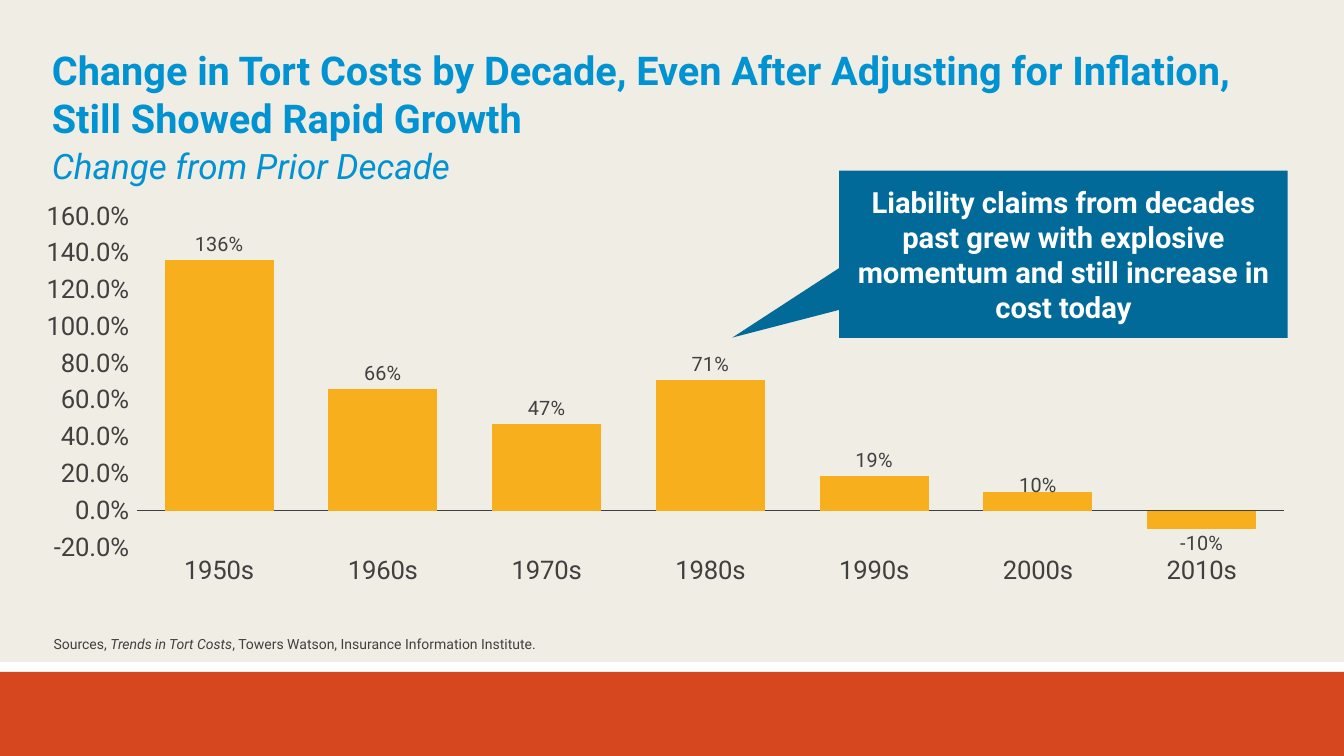
from lxml import etree
from pptx import Presentation
from pptx import util as u
from pptx.chart import data as chart_data
from pptx.dml import color
from pptx.enum import chart as chart_enum, shapes, text
from pptx.oxml import parse_xml
from pptx.oxml.ns import nsdecls, qn

BLUE, GREY = "0092D2", "404040"


def rgb(hex_code):
    return color.RGBColor.from_string(hex_code)


def add_text(shape, runs, size, hex_code, anchor, wrap, bold=False):
    frame = shape.text_frame
    frame.word_wrap = wrap
    frame.vertical_anchor = anchor
    para = frame.paragraphs[0]
    for wording, italic in runs:
        span = para.add_run()
        span.text = wording
        span.font.name = "Roboto"
        span.font.size = u.Pt(size)
        span.font.bold = bold
        span.font.italic = italic
        span.font.color.rgb = rgb(hex_code)
    return para


deck = Presentation()
deck.slide_width, deck.slide_height = u.Pt(1152), u.Pt(648)
page = deck.slides.add_slide(deck.slide_layouts[6])

panels = [
    (shapes.MSO_SHAPE.RECTANGLE, 0, 576, 1152, 72, "D7471F"),
    (shapes.MSO_SHAPE.RECTANGLE, 0, 0, 1152, 567.4, "F0EDE4"),
]
callout_panel = (shapes.MSO_SHAPE.RECTANGULAR_CALLOUT, 719.3, 146.2, 384.5, 143.3, "016A99")

decades = chart_data.CategoryChartData()
decades.categories = [f"{year}s" for year in range(1950, 2020, 10)]
decades.add_series("Change", [1.36, 0.66, 0.47, 0.71, 0.19, 0.1, -0.1])

for kind, left, top, width, height, fill in panels + [callout_panel]:
    if kind == shapes.MSO_SHAPE.RECTANGULAR_CALLOUT:
        chart = page.shapes.add_chart(
            chart_enum.XL_CHART_TYPE.COLUMN_CLUSTERED,
            u.Pt(39.6), u.Pt(170.6), u.Pt(1069.2), u.Pt(362.9), decades).chart
    panel = page.shapes.add_shape(kind, u.Pt(left), u.Pt(top), u.Pt(width), u.Pt(height))
    panel.shadow.inherit = False
    panel.fill.solid()
    panel.fill.fore_color.rgb = rgb(fill)
    panel.line.fill.background()

callout = panel
callout.adjustments[0], callout.adjustments[1] = -0.738, 0.499
frame = callout.text_frame
frame.margin_left = frame.margin_right = frame.margin_top = frame.margin_bottom = u.Pt(10.8)
para = add_text(
    callout,
    [("Liability claims from decades past grew with explosive momentum and still increase in cost today", False)],
    25, "FFFFFF", text.MSO_ANCHOR.MIDDLE, True, True)
para.alignment = text.PP_ALIGN.CENTER

chart.has_legend = False
chart.has_title = False
chart.font.name = "Roboto"
chart.font.size = u.Pt(22)
chart.font.color.rgb = rgb(GREY)

category_axis, value_axis = chart.category_axis, chart.value_axis
category_axis.tick_label_position = chart_enum.XL_TICK_LABEL_POSITION.LOW
category_axis.major_tick_mark = chart_enum.XL_TICK_MARK.NONE
category_axis.format.line.color.rgb = rgb(GREY)
category_axis.format.line.width = u.Pt(0.75)
value_axis.minimum_scale, value_axis.maximum_scale = -0.2, 1.6
value_axis.major_unit = 0.2
value_axis.has_major_gridlines = False
value_axis.format.line.fill.background()
value_axis.tick_labels.number_format = "0.0%"
value_axis.tick_labels.number_format_is_linked = False

plot = chart.plots[0]
plot.gap_width = 50
plot.vary_by_categories = False
bars = plot.series[0]
bars.invert_if_negative = False
bars.format.fill.solid()
bars.format.fill.fore_color.rgb = rgb("F7AF1E")

labels = bars.data_labels
labels.show_value = True
labels.number_format = "0%"
labels.number_format_is_linked = False
label_2000s = bars.points[5].data_label
for label in (labels, label_2000s):
    label.position = chart_enum.XL_LABEL_POSITION.OUTSIDE_END
    label.font.name = "Roboto"
    label.font.size = u.Pt(17)
    label.font.color.rgb = rgb(GREY)

label_xml = bars.data_labels._element.find(qn("c:dLbl"))
label_xml.insert(1, parse_xml(
    f'<c:layout {nsdecls("c")}><c:manualLayout><c:x val="0"/><c:y val="0.02"/></c:manualLayout></c:layout>'))
label_xml.insert(2, parse_xml(f'<c:numFmt {nsdecls("c")} formatCode="0%" sourceLinked="0"/>'))

plot_area = chart._chartSpace.chart.plotArea
for old_layout in plot_area.findall(qn("c:layout")):
    plot_area.remove(old_layout)
layout = parse_xml(f'<c:layout {nsdecls("c")}><c:manualLayout/></c:layout>')
plot_area.insert(0, layout)
for tag, value in [("layoutTarget", "inner"), ("xMode", "edge"), ("yMode", "edge"),
                   ("x", "0.073"), ("y", "0.041"), ("w", "0.919"), ("h", "0.782")]:
    etree.SubElement(layout[0], qn(f"c:{tag}")).set("val", value)

title = page.shapes.add_textbox(u.Pt(37.4), u.Pt(36), u.Pt(1066.3), u.Pt(90))
add_text(
    title,
    [("Change in Tort Costs by Decade, Even After Adjusting for Inflation, Still Showed Rapid Growth", False)],
    34, "0092D1", text.MSO_ANCHOR.TOP, True, True)

sources = page.shapes.add_textbox(u.Pt(38.9), u.Pt(541.4), u.Pt(434.9), u.Pt(21.6))
add_text(
    sources,
    [("Sources, ", False), ("Trends in Tort Costs", True),
     (", Towers Watson, Insurance Information Institute.", False)],
    12, GREY, text.MSO_ANCHOR.BOTTOM, False)

subtitle = page.shapes.add_textbox(u.Pt(37.4), u.Pt(124.6), u.Pt(374.4), u.Pt(40.3))
para = add_text(subtitle, [("Change from Prior Decade", True)], 30, BLUE, text.MSO_ANCHOR.TOP, False)
para.line_spacing = 0.9

deck.save("out.pptx")
